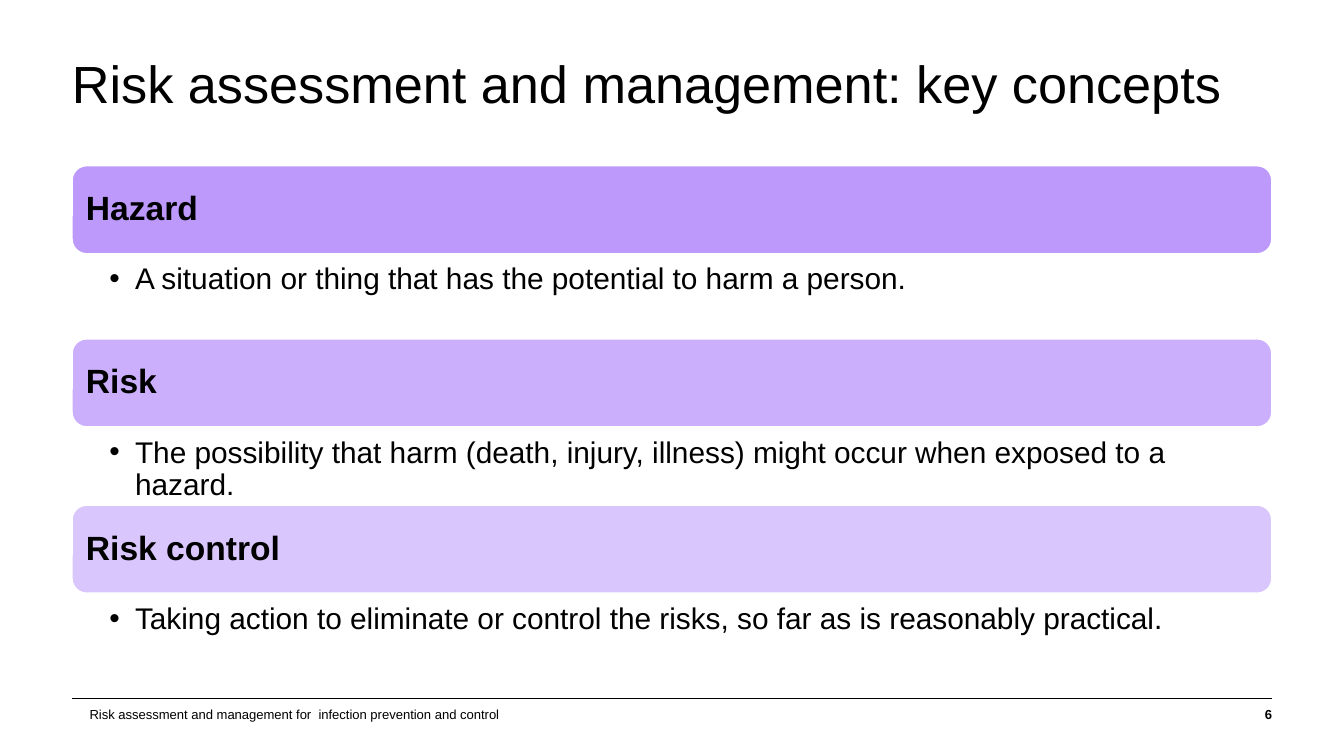
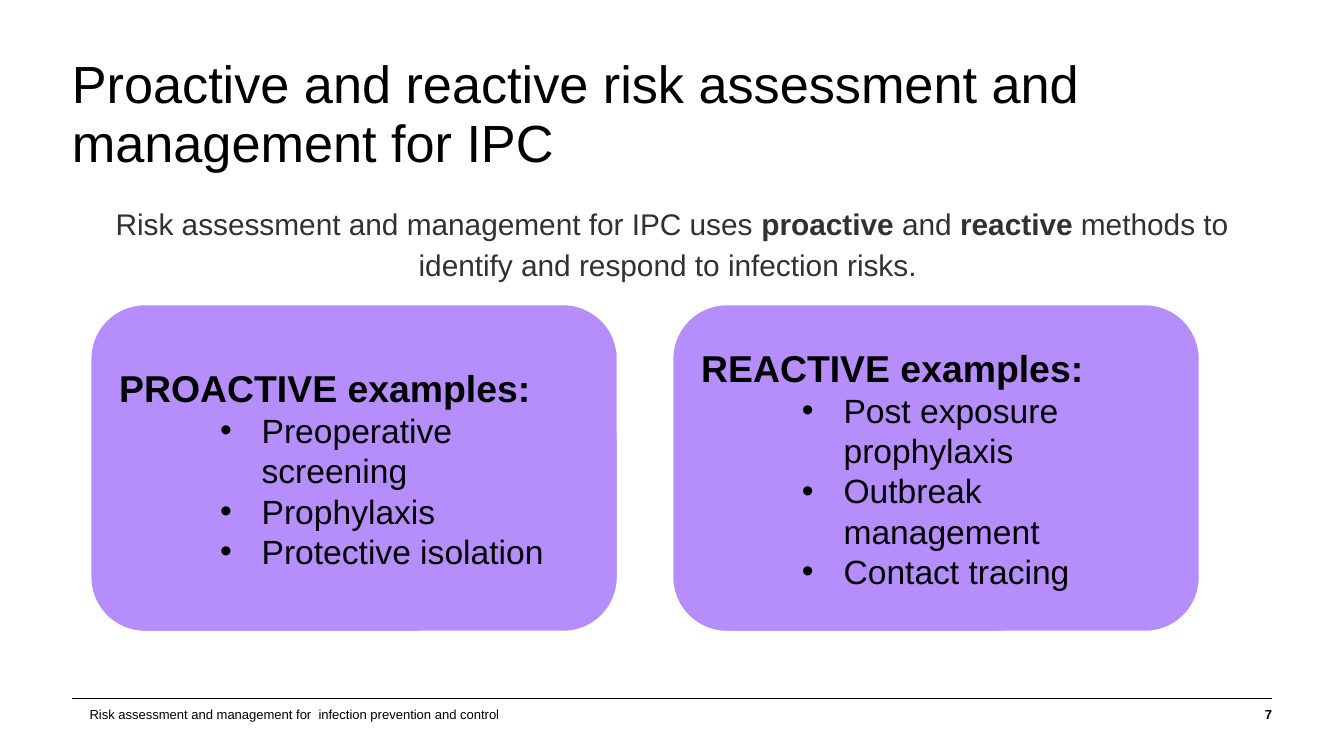
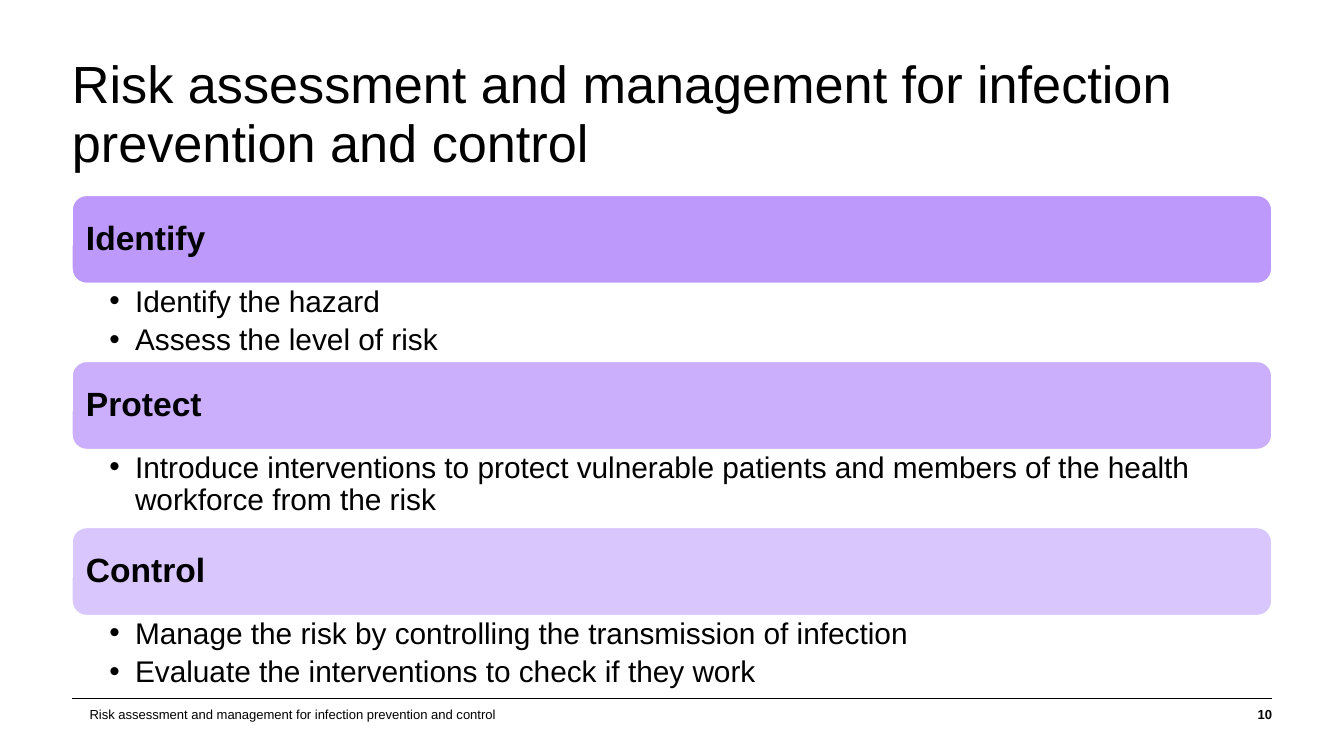
from dataclasses import dataclass

from lxml import etree
from pptx import Presentation
from pptx.dml.color import RGBColor
from pptx.enum.shapes import MSO_CONNECTOR, MSO_SHAPE
from pptx.enum.text import MSO_ANCHOR, MSO_AUTO_SIZE, PP_ALIGN
from pptx.oxml.ns import qn
from pptx.util import Inches, Pt

STRAIGHT = MSO_CONNECTOR.STRAIGHT
ROUNDED = MSO_SHAPE.ROUNDED_RECTANGLE
TOP, MIDDLE = MSO_ANCHOR.TOP, MSO_ANCHOR.MIDDLE
NO_AUTOFIT = MSO_AUTO_SIZE.NONE
LEFT, CENTER, RIGHT = PP_ALIGN.LEFT, PP_ALIGN.CENTER, PP_ALIGN.RIGHT

SLIDE_WIDTH = Inches(10)
SLIDE_HEIGHT = SLIDE_WIDTH * 9 // 16
TITLE_ONLY = 5
FONT = "Arial"
BLACK, WHITE, CHARCOAL, PURPLE = "000000", "FFFFFF", "313131", "B58EFB"

MARGIN, CONTENT_WIDTH = 5.35, 89.3
FOOTER_RULE, FOOTER_TOP, FOOTER_HEIGHT = 92.35, 93.1, 2.67
BAND_HEIGHT, BULLETS_HEIGHT = 11.7, 10.3
LABEL_INSET_X, LABEL_INSET_Y = 0.35, 0.62
BAND_OPACITIES = (90, 70, 50)
CARD_LEFTS = (6.7, 50)


@dataclass(frozen=True)
class Box:
    """Left, top, width and height as percentages of the slide."""
    left: float
    top: float
    width: float
    height: float

    def lengths(self) -> tuple:
        return (across(self.left), down(self.top),
                across(self.width), down(self.height))


@dataclass(frozen=True)
class Run:
    text: str
    size: float
    color: str = BLACK
    bold: bool = False


@dataclass(frozen=True)
class Bullet:
    level: int
    margin: float
    hanging: float


@dataclass(frozen=True)
class Section:
    label: str
    bullets: tuple


@dataclass(frozen=True)
class BandSlide:
    title: str
    footer: str
    number: str
    tops: tuple
    bullets_offset: float
    sections: tuple


@dataclass(frozen=True)
class Card:
    heading: str
    examples: tuple


BAND_BULLET = Bullet(1, 0.19, 0.19)
CARD_BULLET = Bullet(2, 1.06, 0.31)

KEY_CONCEPTS = BandSlide(
    "Risk assessment and management: key concepts",
    "Risk assessment and management for  infection prevention and control",
    "6", (21.9, 44.8, 66.8), 12.7,
    (
        Section("Hazard", ("A situation or thing that has the potential to harm a person.",)),
        Section("Risk", ("The possibility that harm (death, injury, illness) might occur "
                         "when exposed to a hazard.",)),
        Section("Risk control", ("Taking action to eliminate or control the risks, "
                                 "so far as is reasonably practical.",)),
    ),
)

STEPS = BandSlide(
    "Risk assessment and management for infection prevention and control",
    "Risk assessment and management for infection prevention and control",
    "10", tuple(25.82 + 21.97 * row for row in range(3)), BAND_HEIGHT,
    (
        Section("Identify", ("Identify the hazard", "Assess the level of risk")),
        Section("Protect", ("Introduce interventions to protect vulnerable patients and "
                            "members of the health workforce from the risk",)),
        Section("Control", ("Manage the risk by controlling the transmission of infection",
                            "Evaluate the interventions to check if they work")),
    ),
)

CARDS = (
    Card("PROACTIVE examples:",
         ("Preoperative screening", "Prophylaxis", "Protective isolation")),
    Card("REACTIVE examples:",
         ("Post exposure prophylaxis", "Outbreak management", "Contact tracing")),
)

INTRODUCTION = (
    ("Risk assessment and management for IPC uses ", False),
    ("proactive", True),
    (" and ", False),
    ("reactive", True),
    (" methods to identify and respond to infection risks. ", False),
)


def across(share: float) -> int:
    return round(SLIDE_WIDTH * share / 100)


def down(share: float) -> int:
    return round(SLIDE_HEIGHT * share / 100)


def rgb(color: str) -> RGBColor:
    return RGBColor.from_string(color)


def apply(target, values: dict) -> None:
    for name, value in values.items():
        setattr(target, name, value)


def format_frame(frame, anchor=TOP, insets=(0, 0, 0, 0), wrap: bool = True) -> None:
    sides = ("margin_left", "margin_top", "margin_right", "margin_bottom")
    apply(frame, {"auto_size": NO_AUTOFIT, "word_wrap": wrap, "vertical_anchor": anchor})
    apply(frame, dict(zip(sides, map(Inches, insets))))


def add_bullet(paragraph, bullet: Bullet) -> None:
    paragraph.level = bullet.level
    properties = paragraph._p.get_or_add_pPr()
    properties.set("marL", str(Inches(bullet.margin)))
    properties.set("indent", str(-Inches(bullet.hanging)))
    etree.SubElement(properties, qn("a:buFont")).set("typeface", FONT)
    etree.SubElement(properties, qn("a:buChar")).set("char", "•")


def write_paragraph(frame, runs: list, bullet: Bullet | None = None, **values) -> None:
    is_first = not frame.paragraphs[0].runs
    paragraph = frame.paragraphs[0] if is_first else frame.add_paragraph()
    if bullet:
        add_bullet(paragraph, bullet)
    apply(paragraph, {"alignment": LEFT, **values})
    for item in runs:
        run = paragraph.add_run()
        run.text = item.text
        apply(run.font, {"name": FONT, "size": Pt(item.size), "bold": item.bold})
        run.font.color.rgb = rgb(item.color)


def add_text_box(slide, box: Box, **frame_format):
    frame = slide.shapes.add_textbox(*box.lengths()).text_frame
    format_frame(frame, **frame_format)
    return frame


def add_rounded_panel(slide, box: Box, line_width: float, opacity: int = 100):
    panel = slide.shapes.add_shape(ROUNDED, *box.lengths())
    panel.shadow.inherit = False
    panel.fill.solid()
    panel.fill.fore_color.rgb = rgb(PURPLE)
    panel.line.color.rgb = rgb(WHITE)
    panel.line.width = Pt(line_width)
    if opacity < 100:
        color = panel._element.spPr.find(qn("a:solidFill")).find(qn("a:srgbClr"))
        etree.SubElement(color, qn("a:alpha")).set("val", str(opacity * 1000))
    return panel


def add_footer(slide, text: str, number: str) -> None:
    rule_top = down(FOOTER_RULE)
    rule = slide.shapes.add_connector(
        STRAIGHT, across(MARGIN), rule_top, across(MARGIN + CONTENT_WIDTH), rule_top)
    rule.line.color.rgb = rgb(BLACK)
    rule.line.width = Pt(0.5)
    etree.SubElement(rule._element.spPr, qn("a:effectLst"))
    footer = add_text_box(slide, Box(6.67, FOOTER_TOP, 30.6, FOOTER_HEIGHT),
                          anchor=MIDDLE, wrap=False)
    write_paragraph(footer, [Run(text, 7)])
    page = add_text_box(slide, Box(92.15, FOOTER_TOP, 2.5, FOOTER_HEIGHT), anchor=MIDDLE)
    write_paragraph(page, [Run(number, 7, bold=True)], alignment=RIGHT)


def add_titled_slide(presentation, title: str, footer: str, number: str):
    slide = presentation.slides.add_slide(presentation.slide_layouts[TITLE_ONLY])
    placeholder = slide.shapes.title
    edges = ("left", "top", "width", "height")
    apply(placeholder, dict(zip(edges, Box(MARGIN, 7.35, CONTENT_WIDTH, 9.6).lengths())))
    format_frame(placeholder.text_frame)
    write_paragraph(placeholder.text_frame, [Run(title, 28)], line_spacing=0.95)
    add_footer(slide, footer, number)
    return slide


def add_section(slide, section: Section, top: float, offset: float, opacity: int) -> None:
    add_rounded_panel(slide, Box(MARGIN, top, CONTENT_WIDTH, BAND_HEIGHT), 1, opacity)
    label_box = Box(MARGIN + LABEL_INSET_X, top + LABEL_INSET_Y,
                    CONTENT_WIDTH - 2 * LABEL_INSET_X, BAND_HEIGHT - 2 * LABEL_INSET_Y)
    label = add_text_box(slide, label_box, anchor=MIDDLE, insets=(0.07,) * 4)
    write_paragraph(label, [Run(section.label, 18, bold=True)],
                    line_spacing=0.9, space_after=Pt(7))
    bullets = add_text_box(slide, Box(MARGIN, top + offset, CONTENT_WIDTH, BULLETS_HEIGHT),
                           insets=(0.28, 0.02, 0.12, 0.02))
    for text in section.bullets:
        write_paragraph(bullets, [Run(text, 16)], BAND_BULLET,
                        line_spacing=0.9, space_after=Pt(3.2))


def add_band_slide(presentation, content: BandSlide) -> None:
    slide = add_titled_slide(presentation, content.title, content.footer, content.number)
    for section, top, opacity in zip(content.sections, content.tops, BAND_OPACITIES):
        add_section(slide, section, top, content.bullets_offset, opacity)


def add_card(slide, card: Card, left: float) -> None:
    panel = add_rounded_panel(slide, Box(left, 40.21, 39.3, 43.42), 1.5)
    frame = panel.text_frame
    format_frame(frame, MIDDLE, (0.1, 0.05, 0.1, 0.05))
    write_paragraph(frame, [Run(card.heading, 20, bold=True)])
    for example in card.examples:
        write_paragraph(frame, [Run(example, 18)], CARD_BULLET)


def add_methods_slide(presentation) -> None:
    slide = add_titled_slide(
        presentation, "Proactive and reactive risk assessment and management for IPC",
        KEY_CONCEPTS.footer, "7")
    introduction = add_text_box(slide, Box(MARGIN, 26.53, CONTENT_WIDTH, 63.15))
    runs = [Run(text, 16, CHARCOAL, bold) for text, bold in INTRODUCTION]
    write_paragraph(introduction, runs, alignment=CENTER, line_spacing=1.14)
    for card, left in zip(CARDS, CARD_LEFTS):
        add_card(slide, card, left)


def main() -> None:
    presentation = Presentation()
    apply(presentation, {"slide_width": SLIDE_WIDTH, "slide_height": SLIDE_HEIGHT})
    add_band_slide(presentation, KEY_CONCEPTS)
    add_methods_slide(presentation)
    add_band_slide(presentation, STEPS)
    presentation.save("out.pptx")


if __name__ == "__main__":
    main()
